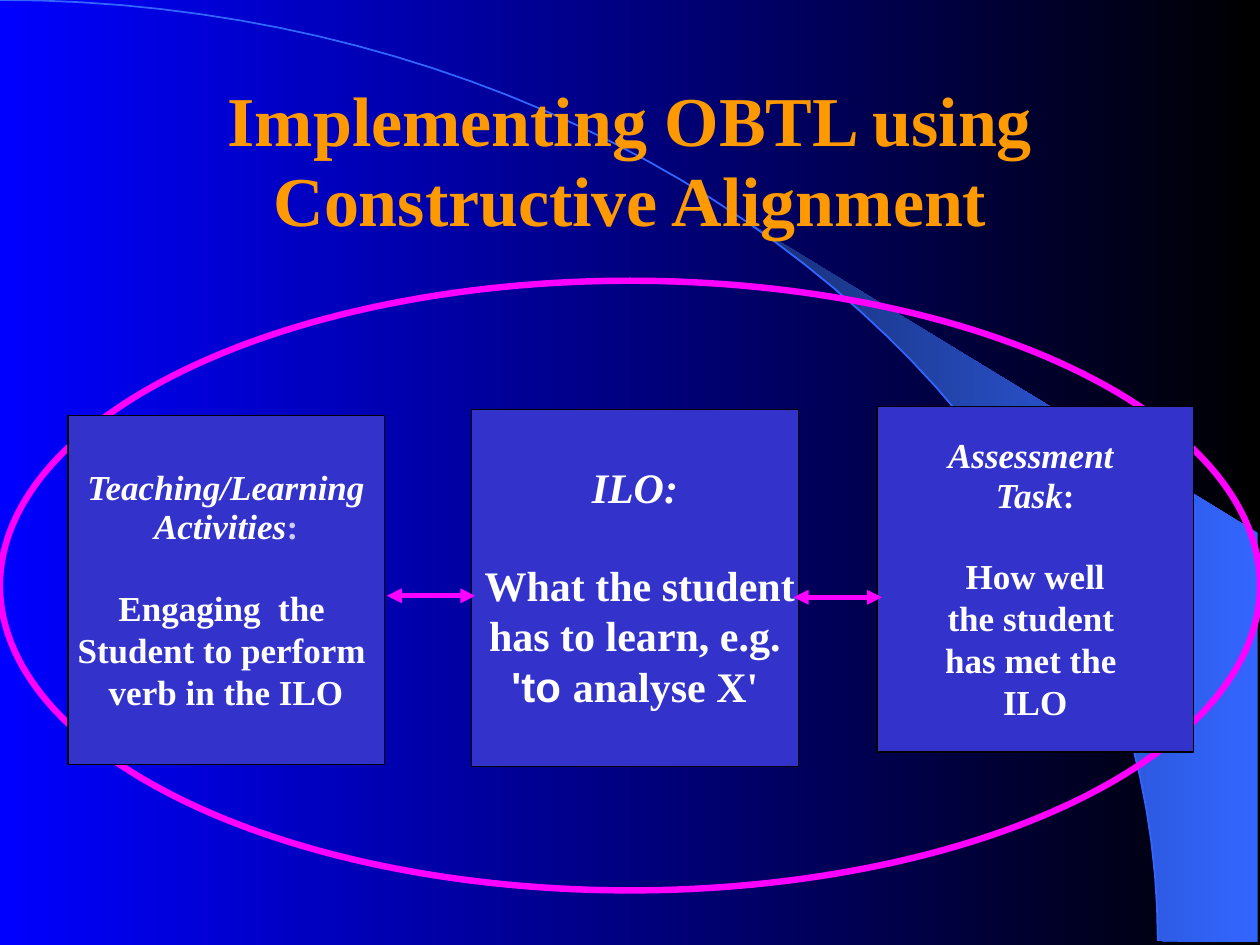
from math import cos, radians, sin

from lxml.etree import SubElement
from pptx import Presentation
from pptx.dml.color import RGBColor
from pptx.enum.shapes import MSO_CONNECTOR as Connector, MSO_SHAPE as Preset
from pptx.enum.text import MSO_ANCHOR as Anchor, PP_ALIGN as Align
from pptx.oxml.ns import qn
from pptx.util import Cm, Pt


def color(value):
    return RGBColor.from_string(value)


def arc_points(first, last, step=2):
    return [(23.34 * sin(radians(angle)), 18.97 * (1 - cos(radians(angle))))
            for angle in range(first, last + 1, step)]


class AlignmentSlide:
    """Hold the style and the slide, and add each kind of element."""

    font = "Times New Roman"
    white, orange, magenta = "FFFFFF", "FF9900", "FF00FF"
    box_fill, black, blue = "3333CC", "000000", "3366FF"

    def __init__(self, presentation):
        self.slide = presentation.slides.add_slide(presentation.slide_layouts[5])
        self.shapes = self.slide.shapes
        self.gradient(self.slide.background.fill, self.black, "0000FF")

    def gradient(self, fill, start, end):
        fill.gradient()
        fill.gradient_angle = 180
        for stop, value in zip(fill.gradient_stops, (start, end)):
            stop.color.rgb = color(value)

    def outline(self, shape, value, width):
        shape.line.color.rgb = color(value)
        shape.line.width = Pt(width)

    def format_paragraph(self, paragraph, size, value, italic=False, spacing=0.95):
        paragraph.alignment = Align.CENTER
        paragraph.line_spacing = spacing
        font = paragraph.font
        font.name, font.size, font.bold, font.italic = self.font, Pt(size), True, italic
        font.color.rgb = color(value)

    def freeform(self, points, close):
        start, *rest = [(Cm(x), Cm(y)) for x, y in points]
        builder = self.shapes.build_freeform(*start)
        builder.add_line_segments(rest, close=close)
        shape = builder.convert_to_shape()
        shape.shadow.inherit = False
        return shape

    def swoosh(self):
        corners = [(25.35, 10.74), (25.35, 19)]
        band = self.freeform(arc_points(40, 90) + corners[::-1], True)
        self.gradient(band.fill, self.blue, "172F75")
        band.line.fill.background()
        curve = self.freeform(arc_points(0, 90), False)
        curve.fill.background()
        self.outline(curve, self.blue, 1)

    def ellipse(self, left, top, width, height):
        shape = self.shapes.add_shape(Preset.OVAL, Cm(left), Cm(top), Cm(width), Cm(height))
        shape.shadow.inherit = False
        shape.fill.background()
        self.outline(shape, self.magenta, 3.69)

    def title(self, text, left, top, width, height):
        title = self.shapes.title
        title.left, title.top, title.width, title.height = map(Cm, (left, top, width, height))
        title.text_frame.text = text
        title.text_frame.vertical_anchor = Anchor.MIDDLE
        self.format_paragraph(title.text_frame.paragraphs[0], 40, self.orange)
        title.element.getparent().append(title.element)

    def box(self, left, top, width, height, size, heading, body):
        shape = self.shapes.add_shape(Preset.RECTANGLE, Cm(left), Cm(top), Cm(width), Cm(height))
        shape.shadow.inherit = False
        shape.fill.solid()
        shape.fill.fore_color.rgb = color(self.box_fill)
        self.outline(shape, self.black, 0.75)
        frame = shape.text_frame
        frame.word_wrap = False
        frame.vertical_anchor = Anchor.MIDDLE
        for index, runs in enumerate(heading + body):
            paragraph = frame.add_paragraph() if index else frame.paragraphs[0]
            is_heading = index < len(heading)
            self.format_paragraph(paragraph, size, self.white, is_heading,
                                  0.95 if is_heading else 1.0)
            if index == len(heading):
                paragraph.space_before = Pt(1.1 * size)
            for text, style in runs:
                run = paragraph.add_run()
                run.text = text
                if "font" in style:
                    run.font.name = style["font"]
                if "color" in style:
                    run.font.color.rgb = color(style["color"])
                if "italic" in style:
                    run.font.italic = style["italic"]

    def arrow(self, left, right, y):
        connector = self.shapes.add_connector(Connector.STRAIGHT, Cm(left), Cm(y), Cm(right), Cm(y))
        self.outline(connector, self.magenta, 2.83)
        line = connector.line._get_or_add_ln()
        for end in ("a:headEnd", "a:tailEnd"):
            SubElement(line, qn(end), type="triangle")
        SubElement(connector.element.spPr, qn("a:effectLst"))


def plain(*lines):
    return [[(line, {})] for line in lines]


def main():
    presentation = Presentation()
    presentation.slide_width, presentation.slide_height = Cm(25.4), Cm(19.05)
    page = AlignmentSlide(presentation)
    page.swoosh()
    page.ellipse(0, 5.66, 25.4, 12.29)
    page.title("Implementing OBTL using Constructive Alignment", 1.9, 1.35, 21.6, 3.84)
    page.box(9.5, 8.26, 6.6, 7.19, 24, plain("ILO:"),
             plain(" What the student", "has to learn, e.g.")
             + [[("'to ", {"font": "Arial"}), ("analyse X'", {})]])
    page.box(1.37, 8.38, 6.38, 7.04, 20,
             plain("Teaching/Learning")
             + [[("Activities", {}), (":", {"color": "CCCCFF", "italic": False})]],
             plain("Engaging  the ", "Student to perform ", "verb in the ILO"))
    page.box(17.68, 8.2, 6.38, 6.96, 20,
             plain("Assessment ") + [[("Task", {}), (":", {"italic": False})]],
             plain("How well", "the student ", "has met the ", "ILO"))
    page.arrow(7.8, 9.58, 12.01)
    page.arrow(16, 17.78, 12.04)
    presentation.save("out.pptx")


if __name__ == "__main__":
    main()
